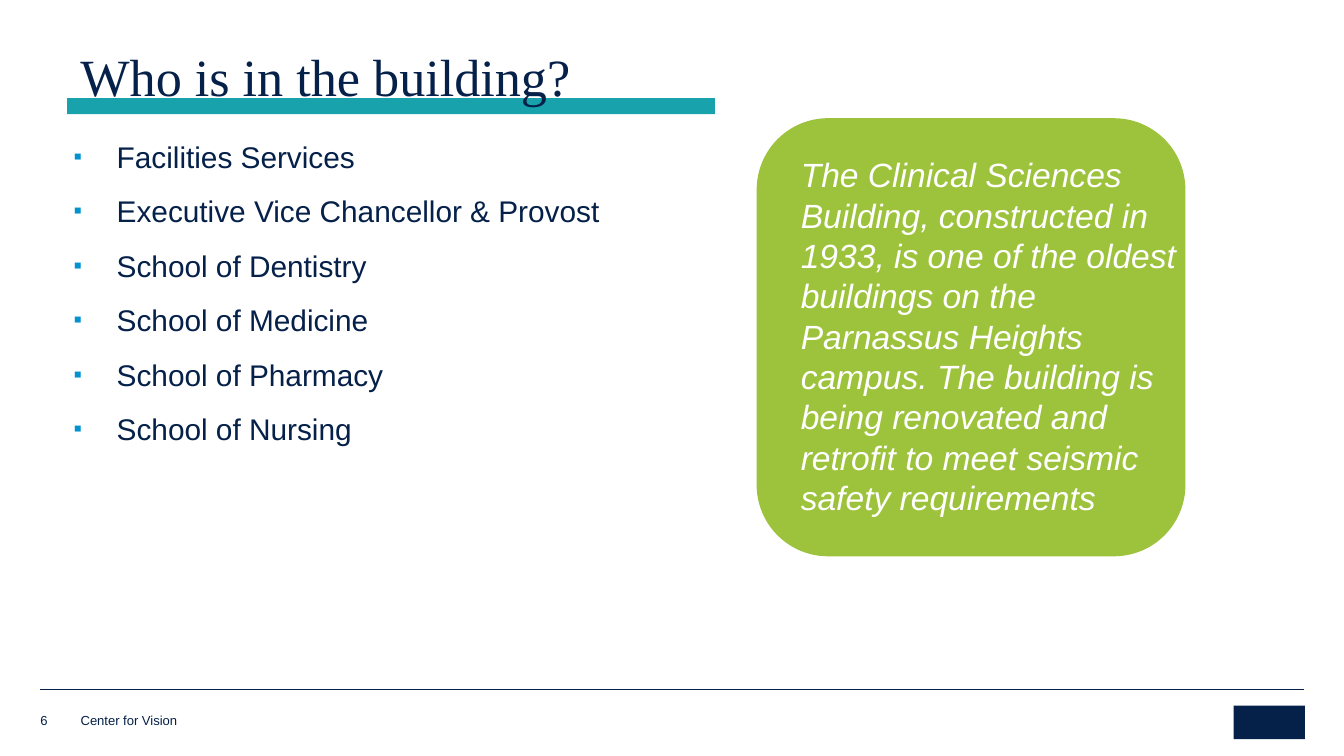
from dataclasses import dataclass

from lxml import etree
from pptx import Presentation
from pptx import util as u
from pptx.dml import color
from pptx.enum import shapes, text
from pptx.oxml import ns

COLOURS = {
    "navy": "052049",
    "teal": "18A3AC",
    "green": "9DC23B",
    "blue": "0093D0",
    "white": "FFFFFF",
}
OCCUPANTS = [
    "Facilities Services",
    "Executive Vice Chancellor & Provost",
    "School of Dentistry",
    "School of Medicine",
    "School of Pharmacy",
    "School of Nursing",
]
HISTORY = (
    "The Clinical Sciences Building, constructed in 1933, is one of the oldest "
    "buildings on the Parnassus Heights campus. The building is being renovated "
    "and retrofit to meet seismic safety requirements"
)


@dataclass(frozen=True)
class Area:
    left: float
    top: float
    width: float
    height: float

    def lengths(self) -> list[u.Length]:
        return [u.Inches(n) for n in (self.left, self.top, self.width, self.height)]


@dataclass(frozen=True)
class Block:
    kind: shapes.MSO_SHAPE
    area: Area
    colour: str


BLOCKS = [
    Block(shapes.MSO_SHAPE.RECTANGLE, Area(9.18, 5.25, 0.53, 0.25), "navy"),
    Block(shapes.MSO_SHAPE.ROUNDED_RECTANGLE, Area(5.63, 0.88, 3.19, 3.26), "green"),
    Block(shapes.MSO_SHAPE.RECTANGLE, Area(0.5, 0.73, 4.82, 0.12), "teal"),
]


def rgb(name: str) -> color.RGBColor:
    return color.RGBColor.from_string(COLOURS[name])


def add_block(page, block: Block) -> None:
    shape = page.shapes.add_shape(block.kind, *block.area.lengths())
    shape.shadow.inherit = False
    shape.fill.solid()
    shape.fill.fore_color.rgb = rgb(block.colour)
    shape.line.fill.background()


def add_rule(page, left: float, right: float, top: float) -> None:
    rule = page.shapes.add_connector(
        shapes.MSO_CONNECTOR.STRAIGHT,
        u.Inches(left), u.Inches(top), u.Inches(right), u.Inches(top),
    )
    rule.line.color.rgb = rgb("navy")
    rule.line.width = u.Pt(0.25)
    etree.SubElement(rule.element.spPr, ns.qn("a:effectLst"))


def add_bullet(para) -> None:
    properties = para._p.get_or_add_pPr()
    properties.set("marL", str(u.Inches(0.32)))
    properties.set("indent", str(-u.Inches(0.32)))
    colour = etree.SubElement(properties, ns.qn("a:buClr"))
    etree.SubElement(colour, ns.qn("a:srgbClr"), val=COLOURS["blue"])
    etree.SubElement(properties, ns.qn("a:buSzPct"), val="80000")
    etree.SubElement(properties, ns.qn("a:buFont"), typeface="Arial")
    etree.SubElement(properties, ns.qn("a:buChar"), char="▪")


def add_text(page, area: Area, *lines: str, size: float, font: str = "Arial",
             colour: str = "navy", italic: bool = False, bottom: bool = False,
             inset: bool = True, bullets: bool = False, spacing: float = 1.0,
             after: float = 0) -> None:
    frame = page.shapes.add_textbox(*area.lengths()).text_frame
    frame.word_wrap = True
    if bottom:
        frame.vertical_anchor = text.MSO_ANCHOR.BOTTOM
    if not inset:
        frame.margin_left = frame.margin_right = u.Inches(0)
        frame.margin_top = frame.margin_bottom = u.Inches(0)
    for index, line in enumerate(lines):
        para = frame.add_paragraph() if index else frame.paragraphs[0]
        para.line_spacing = spacing
        para.space_after = u.Pt(after)
        if bullets:
            add_bullet(para)
        span = para.add_run()
        span.text = line
        span.font.name = font
        span.font.size = u.Pt(size)
        span.font.italic = italic
        span.font.color.rgb = rgb(colour)


def main() -> None:
    deck = Presentation()
    deck.slide_width = u.Inches(10)
    deck.slide_height = u.Inches(10 * 9 / 16)
    page = deck.slides.add_slide(deck.slide_layouts[6])

    add_rule(page, 0.3, 9.7, 5.13)
    for block in BLOCKS:
        add_block(page, block)

    add_text(page, Area(0.6, 5.31, 4.71, 0.11), "Center for Vision",
             size=7, bottom=True, inset=False)
    add_text(page, Area(0.3, 5.29, 0.27, 0.13), "6",
             size=7, bottom=True, inset=False)
    add_text(page, Area(0.45, 0.98, 5.52, 3.06), *OCCUPANTS,
             size=16, bullets=True, after=10)
    add_text(page, Area(5.86, 1.1, 3.08, 2.83), HISTORY,
             size=18, colour="white", italic=True)
    add_text(page, Area(0.5, 0.35, 8.94, 0.5), "Who is in the building?",
             size=28, font="Times New Roman", bottom=True, spacing=0.85)

    deck.save("out.pptx")


if __name__ == "__main__":
    main()
